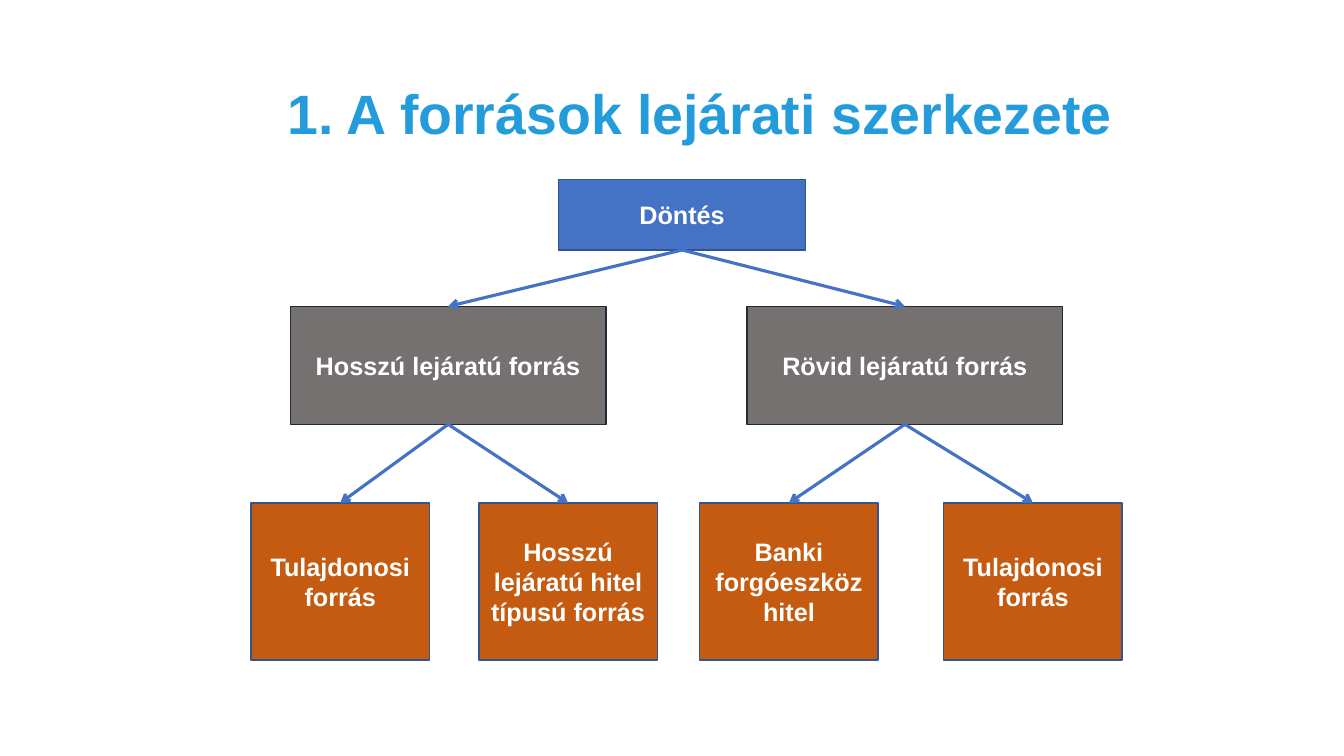
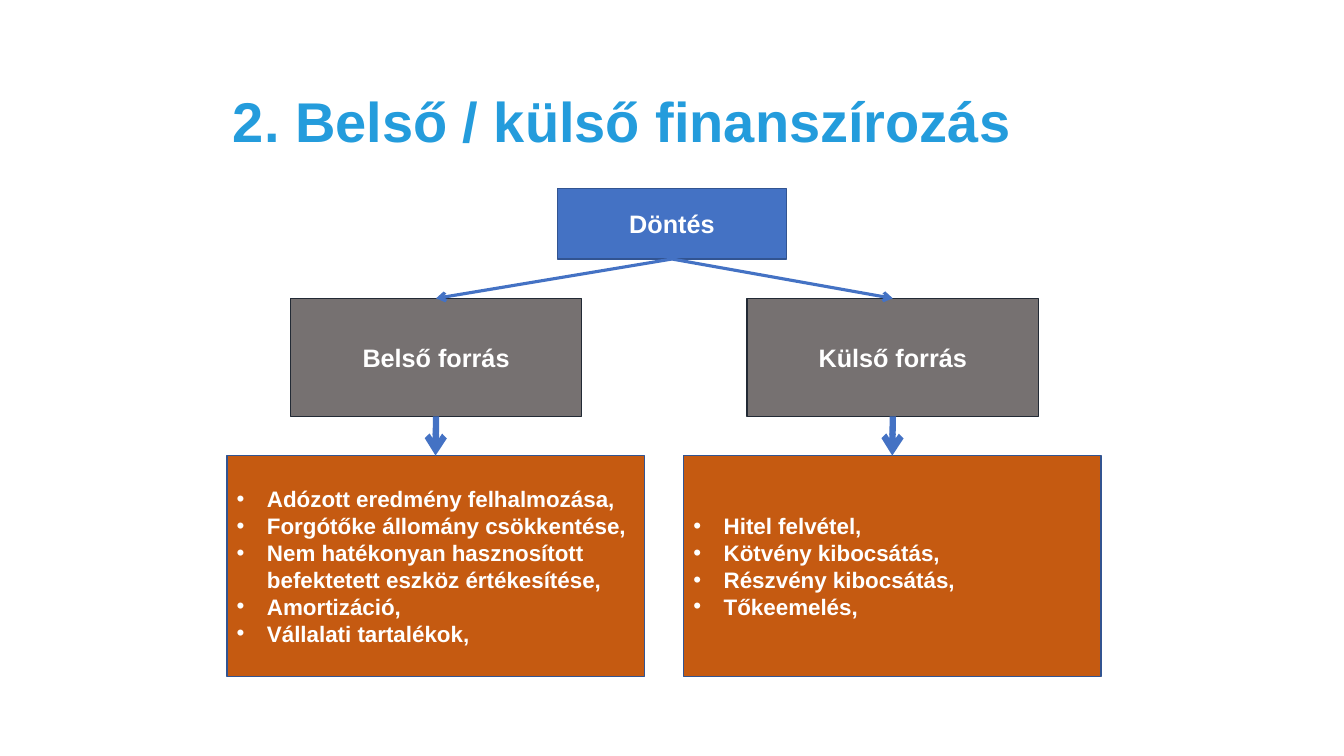
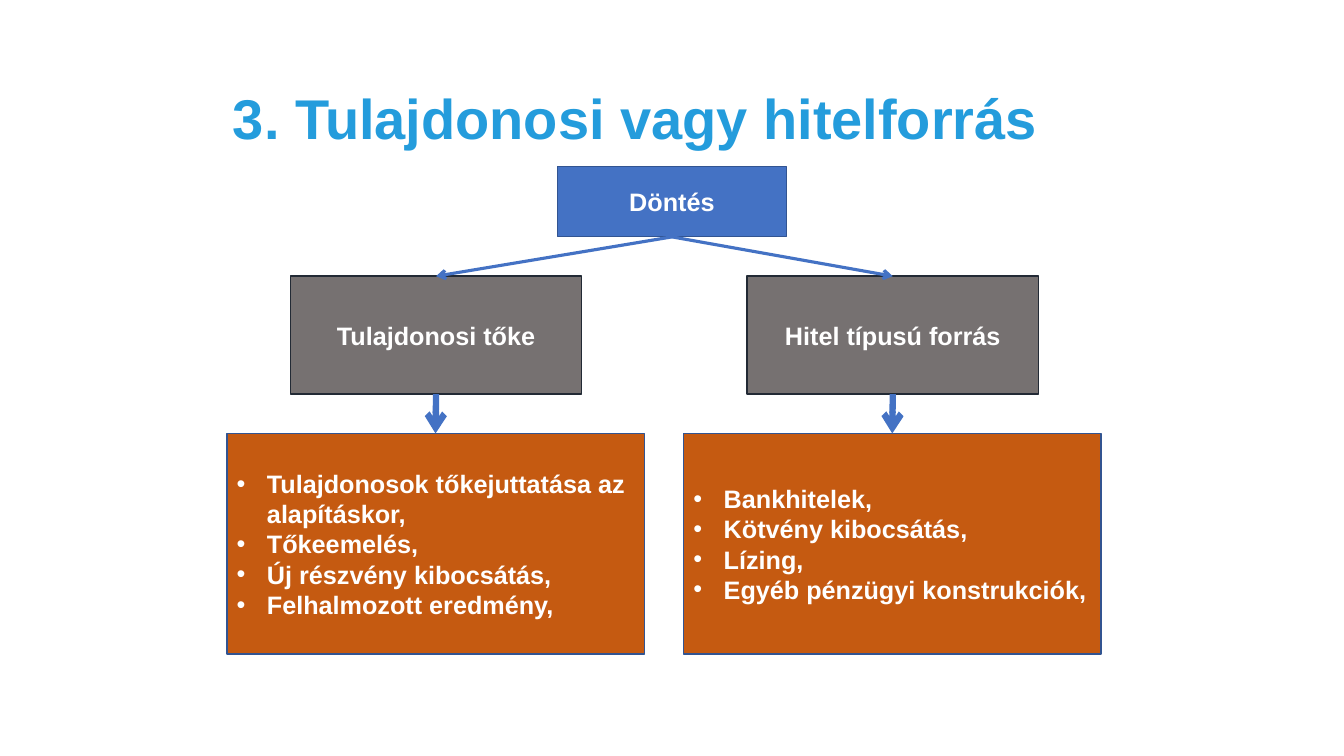
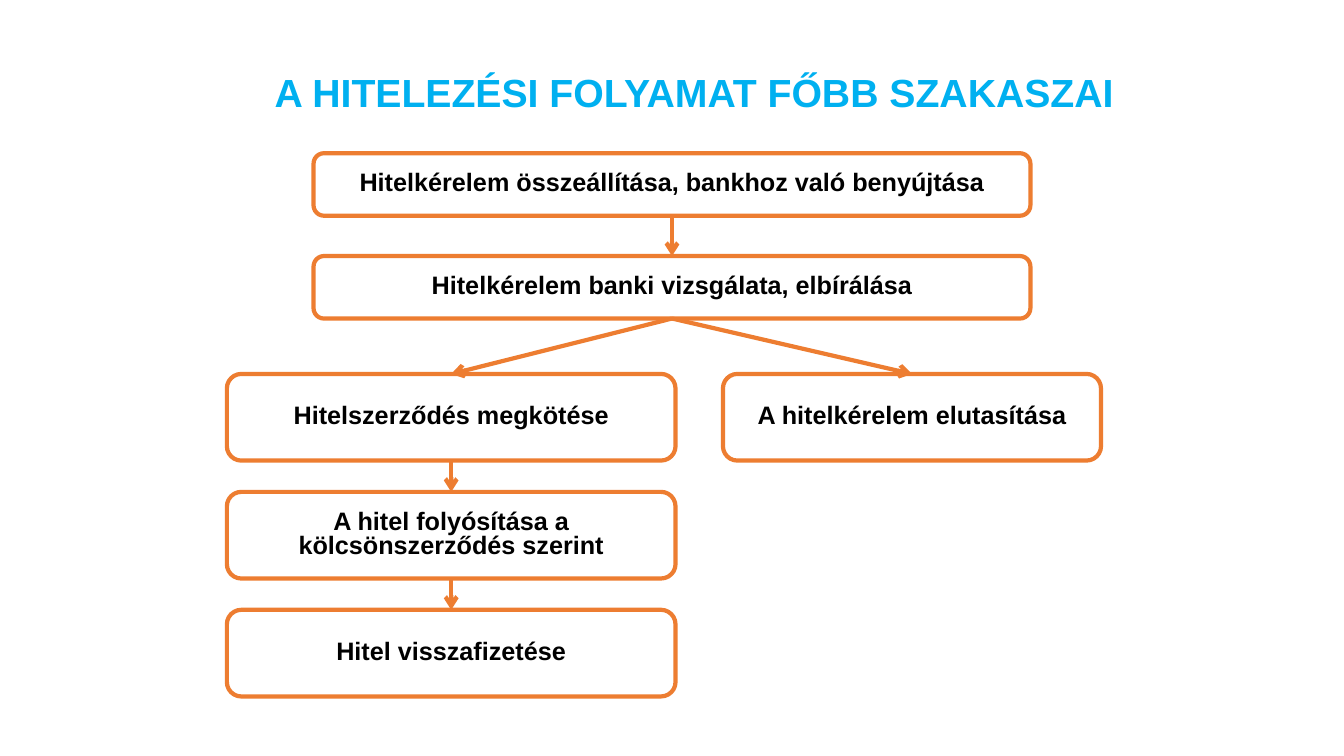
import dataclasses

import pptx
import pptx.dml.color
import pptx.enum.shapes
import pptx.enum.text
import pptx.oxml
import pptx.oxml.ns
import pptx.util

Inches = pptx.util.Inches
Shape = pptx.enum.shapes.MSO_SHAPE
Align = pptx.enum.text.PP_ALIGN
TOP, BOTTOM = 0, 2


@dataclasses.dataclass(frozen=True)
class Theme:
    font: str = "Arial"
    title_blue: str = "249CDC"
    process_blue: str = "00B0F0"
    arrow_blue: str = "4472C4"
    orange: str = "ED7D31"
    white: str = "FFFFFF"
    black: str = "000000"
    title_size: float = 40
    process_title_size: float = 28
    text_size: float = 18
    small_size: float = 16
    bullet_indent: float = 0.3


@dataclasses.dataclass(frozen=True)
class BoxStyle:
    fill: str
    outline: str
    outline_width: float = 1
    text: str = "FFFFFF"
    form: int = Shape.RECTANGLE
    line_spacing: float = 1.0


THEME = Theme()
DECISION = BoxStyle("4472C4", "325491")
BRANCH = BoxStyle("767171", "222A35")
DETAIL = BoxStyle("C55A11", "325491")
STEP = BoxStyle(THEME.white, THEME.orange, 3, THEME.black, Shape.ROUNDED_RECTANGLE, 0.8)


def rgb(value):
    return pptx.dml.color.RGBColor.from_string(value)


def add_element(parent, xml):
    """Append a DrawingML element, given without its namespace declaration."""
    namespace = pptx.oxml.ns.nsdecls("a")
    parent.append(pptx.oxml.parse_xml(xml.replace("/>", f" {namespace}/>")))


def write_span(para, text, size, color):
    span = para.add_run()
    span.text = text
    formats = {"name": THEME.font, "size": pptx.util.Pt(size), "bold": True}
    for name, value in formats.items():
        setattr(span.font, name, value)
    span.font.color.rgb = rgb(color)


def add_page(deck, title, left, top, width=9, align=Align.LEFT,
             size=THEME.title_size, color=THEME.title_blue, line_spacing=0.9):
    page = deck.slides.add_slide(deck.slide_layouts[5])
    box = page.shapes.title
    bounds = {"left": left, "top": top, "width": width, "height": 1.25}
    for name, value in bounds.items():
        setattr(box, name, Inches(value))
    frame_formats = {
        "word_wrap": True,
        "auto_size": pptx.enum.text.MSO_AUTO_SIZE.NONE,
        "vertical_anchor": pptx.enum.text.MSO_ANCHOR.MIDDLE,
    }
    for name, value in frame_formats.items():
        setattr(box.text_frame, name, value)
    para = box.text_frame.paragraphs[0]
    para.alignment = align
    para.line_spacing = line_spacing
    write_span(para, title, size, color)
    return page


def add_box(page, style, lines, left, top, width, height,
            size=THEME.text_size, bullets=False):
    box = page.shapes.add_shape(style.form, *map(Inches, (left, top, width, height)))
    box.shadow.inherit = False
    box.fill.solid()
    box.fill.fore_color.rgb = rgb(style.fill)
    box.line.color.rgb = rgb(style.outline)
    box.line.width = pptx.util.Pt(style.outline_width)
    frame = box.text_frame
    frame.word_wrap = True
    frame.vertical_anchor = pptx.enum.text.MSO_ANCHOR.MIDDLE
    for index, line in enumerate(lines):
        para = frame.add_paragraph() if index else frame.paragraphs[0]
        para.alignment = Align.LEFT if bullets else Align.CENTER
        para.line_spacing = style.line_spacing
        if bullets:
            add_bullet(para)
        write_span(para, line, size, style.text)
    return box


def add_bullet(para):
    properties = para._p.get_or_add_pPr()
    indent = Inches(THEME.bullet_indent)
    properties.set("marL", str(indent))
    properties.set("indent", str(-indent))
    add_element(properties, f'<a:buFont typeface="{THEME.font}"/>')
    add_element(properties, '<a:buChar char="•"/>')


def add_arrow(page, upper, lower, color=THEME.arrow_blue, width=2.25):
    """Join the bottom of the upper box to the top of the lower one."""
    arrow = page.shapes.add_connector(pptx.enum.shapes.MSO_CONNECTOR.STRAIGHT, 0, 0, 0, 0)
    arrow.begin_connect(upper, BOTTOM)
    arrow.end_connect(lower, TOP)
    arrow.line.color.rgb = rgb(color)
    arrow.line.width = pptx.util.Pt(width)
    add_element(arrow.line._get_or_add_ln(), '<a:tailEnd type="arrow"/>')
    add_element(arrow._element.spPr, "<a:effectLst/>")


def build_maturity_page(deck):
    page = add_page(deck, "1. A források lejárati szerkezete", 2.44, 0.53,
                    align=Align.CENTER, size=39.6)
    decision = add_box(page, DECISION, ["Döntés"], 5.54, 1.78, 2.45, 0.7)
    branches = [
        ("Hosszú lejáratú forrás", 2.88,
         [("Tulajdonosi forrás", 2.49), ("Hosszú lejáratú hitel típusú forrás", 4.75)]),
        ("Rövid lejáratú forrás", 7.41,
         [("Banki forgóeszköz hitel", 6.94), ("Tulajdonosi forrás", 9.36)]),
    ]
    for name, left, sources in branches:
        branch = add_box(page, BRANCH, [name], left, 3.04, 3.13, 1.17)
        add_arrow(page, decision, branch)
        for source, source_left in sources:
            add_arrow(page, branch,
                      add_box(page, DETAIL, [source], source_left, 4.99, 1.77, 1.56))


def build_choice_page(deck, title, title_top, top, branches, size):
    """Draw a decision with two branches, each above its bulleted list."""
    page = add_page(deck, title, 2.21, title_top)
    gap, decision_height, branch_height = 0.39, 0.7, 1.17
    branch_top = top + decision_height + gap
    list_top = branch_top + branch_height + gap
    decision = add_box(page, DECISION, ["Döntés"], 5.53, top, 2.27, decision_height)
    for column, (name, items) in enumerate(branches):
        shift = 4.53 * column
        branch = add_box(page, BRANCH, [name], 2.88 + shift, branch_top, 2.89, branch_height)
        details = add_box(page, DETAIL, items, 2.25 + shift, list_top, 4.14, 2.19,
                          size=size, bullets=True)
        add_arrow(page, decision, branch)
        add_arrow(page, branch, details, width=4.5)


def build_process_page(deck):
    page = add_page(deck, "A HITELEZÉSI FOLYAMAT FŐBB SZAKASZAI", 2.06, 0.29, 9.65,
                    Align.CENTER, THEME.process_title_size, THEME.process_blue, 1.0)
    steps = [
        ("Hitelkérelem összeállítása, bankhoz való benyújtása", 3.11, 1.52, 7.11, 0.62),
        ("Hitelkérelem banki vizsgálata, elbírálása", 3.11, 2.54, 7.11, 0.62),
        ("Hitelszerződés megkötése", 2.25, 3.71, 4.45, 0.86),
        ("A hitelkérelem elutasítása", 7.17, 3.71, 3.75, 0.86),
        ("A hitel folyósítása a kölcsönszerződés szerint", 2.25, 4.88, 4.45, 0.86),
        ("Hitel visszafizetése", 2.25, 6.05, 4.45, 0.86),
    ]
    request, review, contract, refusal, payout, repayment = [
        add_box(page, STEP, [text], *bounds) for text, *bounds in steps
    ]
    links = [(request, review), (review, contract), (review, refusal),
             (contract, payout), (payout, repayment)]
    for upper, lower in links:
        add_arrow(page, upper, lower, THEME.orange, 3)


def main():
    deck = pptx.Presentation()
    deck.slide_width = Inches(13.33)
    deck.slide_height = Inches(7.5)
    build_maturity_page(deck)
    build_choice_page(deck, "2. Belső / külső finanszírozás", 0.61, 1.87, [
        ("Belső forrás", [
            "Adózott eredmény felhalmozása,",
            "Forgótőke állomány csökkentése,",
            "Nem hatékonyan hasznosított befektetett eszköz értékesítése,",
            "Amortizáció,",
            "Vállalati tartalékok,",
        ]),
        ("Külső forrás", [
            "Hitel felvétel,",
            "Kötvény kibocsátás,",
            "Részvény kibocsátás,",
            "Tőkeemelés,",
        ]),
    ], THEME.small_size)
    build_choice_page(deck, "3. Tulajdonosi vagy hitelforrás", 0.58, 1.65, [
        ("Tulajdonosi tőke", [
            "Tulajdonosok tőkejuttatása az alapításkor,",
            "Tőkeemelés,",
            "Új részvény kibocsátás,",
            "Felhalmozott eredmény,",
        ]),
        ("Hitel típusú forrás", [
            "Bankhitelek,",
            "Kötvény kibocsátás,",
            "Lízing,",
            "Egyéb pénzügyi konstrukciók,",
        ]),
    ], THEME.text_size)
    build_process_page(deck)
    deck.save("out.pptx")


if __name__ == "__main__":
    main()
